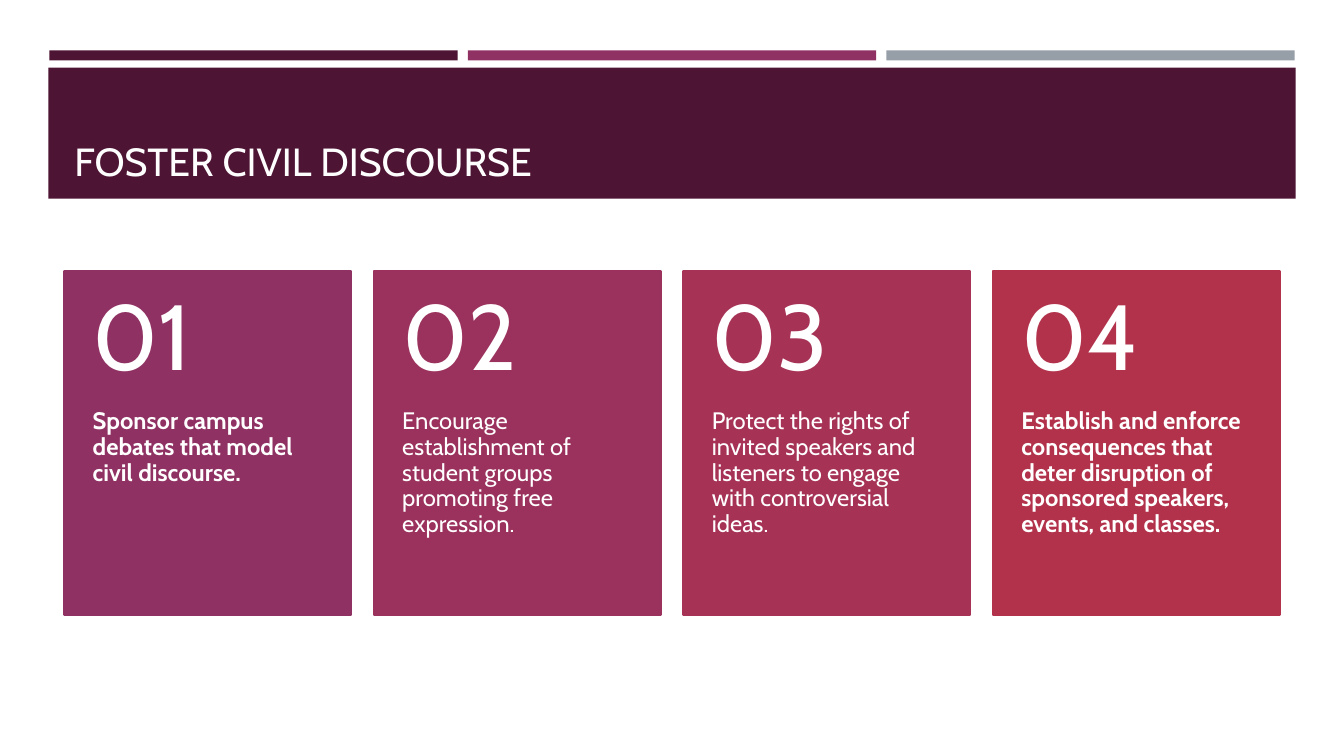
from dataclasses import dataclass

import pptx
import pptx.dml.color
import pptx.enum.shapes
import pptx.enum.text
import pptx.util

PX = 9144  # EMU in one px, at 100 px to the inch
FONT = "Cabin"
COLOURS = {
    "plum": "4D1434",
    "magenta": "903163",
    "grey": "969FA7",
    "berry": "9B325D",
    "rose": "A63256",
    "red": "B2324B",
    "title": "FFFEFF",
    "white": "FFFFFF",
}
TOP = pptx.enum.text.MSO_ANCHOR.TOP
MIDDLE = pptx.enum.text.MSO_ANCHOR.MIDDLE
BOTTOM = pptx.enum.text.MSO_ANCHOR.BOTTOM


@dataclass
class Area:
    left: int
    top: int
    width: int
    height: int

    def emu(self) -> list[int]:
        return [length * PX for length in (self.left, self.top, self.width, self.height)]


@dataclass
class TextStyle:
    size: int
    colour: str
    anchor: pptx.enum.text.MSO_ANCHOR
    insets: tuple[int, int, int, int]  # left, top, right, bottom
    line_spacing: float = 1.0


@dataclass
class Card:
    colour: str
    message: str
    bold: bool = False


TITLE = TextStyle(28, "title", BOTTOM, (10, 5, 10, 5))
NUMBER = TextStyle(66, "white", MIDDLE, (28, 18, 28, 18), 0.9)
MESSAGE = TextStyle(17, "white", TOP, (28, 0, 28, 36), 0.9)

BARS = ["plum", "magenta", "grey"]
BAR_LEFT, BAR_STEP = 49, 415
CARDS = [
    Card("magenta", "Sponsor campus debates that model civil discourse.", True),
    Card("berry", "Encourage establishment of student groups promoting free expression."),
    Card("rose", "Protect the rights of invited speakers and listeners to engage "
                 "with controversial ideas."),
    Card("red", "Establish and enforce consequences that deter disruption of "
                "sponsored speakers, events, and classes.", True),
]
CARD_LEFT, CARD_TOP, CARD_STEP = 64, 269, 307
CARD_WIDTH, CARD_HEIGHT, NUMBER_HEIGHT = 284, 341, 137


def rgb(name: str) -> pptx.dml.color.RGBColor:
    return pptx.dml.color.RGBColor.from_string(COLOURS[name])


def add_block(page, area: Area, colour: str, outline: float = 0) -> None:
    block = page.shapes.add_shape(pptx.enum.shapes.MSO_SHAPE.RECTANGLE, *area.emu())
    block.shadow.inherit = False
    block.fill.solid()
    block.fill.fore_color.rgb = rgb(colour)
    if outline:
        block.line.color.rgb = rgb(colour)
        block.line.width = pptx.util.Pt(outline)
    else:
        block.line.fill.background()


def add_text(page, area: Area, text: str, style: TextStyle, bold: bool = False) -> None:
    frame = page.shapes.add_textbox(*area.emu()).text_frame
    frame.word_wrap = True
    frame.vertical_anchor = style.anchor
    (frame.margin_left, frame.margin_top,
     frame.margin_right, frame.margin_bottom) = [inset * PX for inset in style.insets]
    paragraph = frame.paragraphs[0]
    paragraph.text = text
    paragraph.line_spacing = style.line_spacing
    paragraph.font.name = FONT
    paragraph.font.size = pptx.util.Pt(style.size)
    paragraph.font.bold = bold
    paragraph.font.color.rgb = rgb(style.colour)


def add_card(page, index: int, card: Card) -> None:
    left = CARD_LEFT + index * CARD_STEP
    add_block(page, Area(left, CARD_TOP, CARD_WIDTH, CARD_HEIGHT), card.colour, 1.75)
    message_area = Area(left, CARD_TOP + NUMBER_HEIGHT,
                        CARD_WIDTH, CARD_HEIGHT - NUMBER_HEIGHT)
    add_text(page, message_area, card.message, MESSAGE, card.bold)
    number_area = Area(left, CARD_TOP, CARD_WIDTH, NUMBER_HEIGHT)
    add_text(page, number_area, f"{index + 1:02}", NUMBER)


def main() -> None:
    deck = pptx.Presentation()
    deck.slide_width, deck.slide_height = 1333 * PX, 750 * PX
    page = deck.slides.add_slide(deck.slide_layouts[6])

    # Header: three bars above the title band
    for index, colour in enumerate(BARS):
        add_block(page, Area(BAR_LEFT + index * BAR_STEP, 50, 405, 10), colour)
    add_block(page, Area(48, 67, 1237, 130), "plum")
    add_text(page, Area(64, 77, 1206, 111), "FOSTER CIVIL DISCOURSE", TITLE)

    # Numbered cards
    for index, card in enumerate(CARDS):
        add_card(page, index, card)

    deck.save("out.pptx")


if __name__ == "__main__":
    main()
